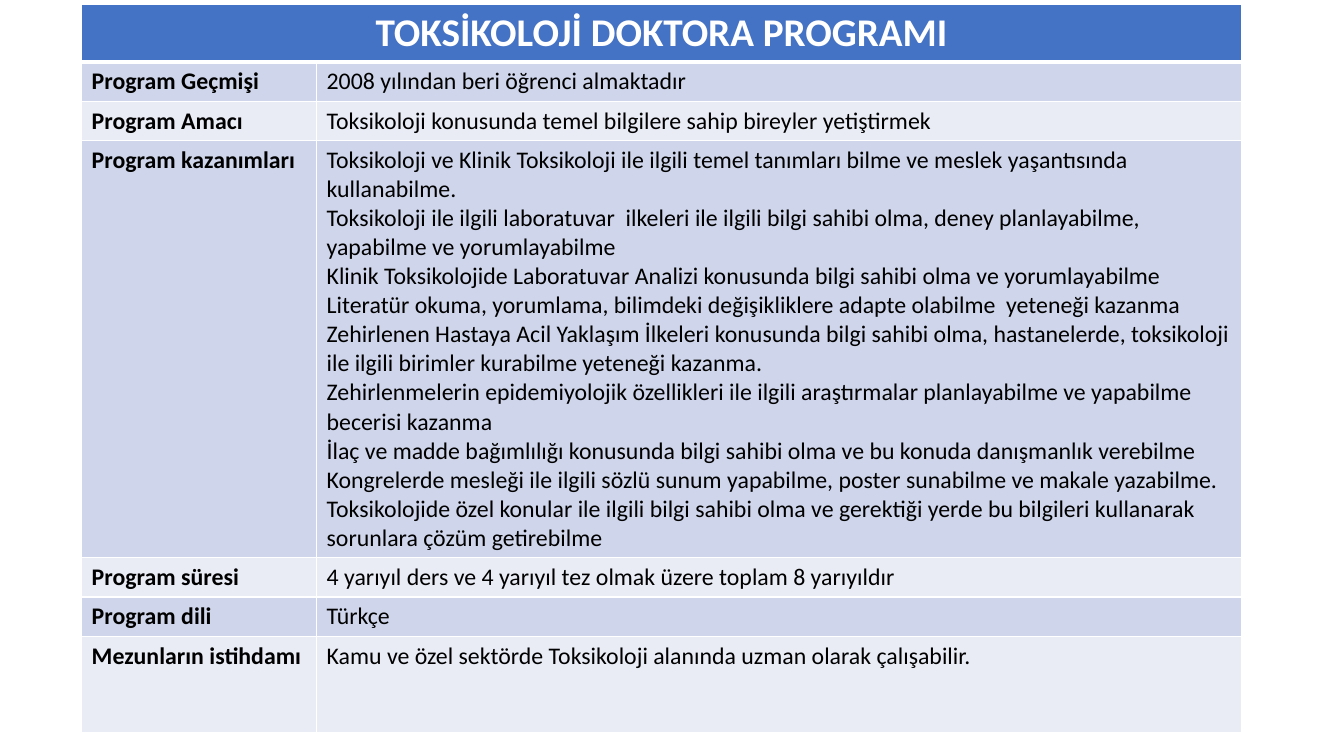
from lxml.etree import SubElement
from pptx import Presentation
from pptx.dml.color import RGBColor
from pptx.enum.text import PP_ALIGN
from pptx.oxml.ns import qn
from pptx.util import Inches, Pt

HEADING = "TOKSİKOLOJİ DOKTORA PROGRAMI"
OUTCOMES = [
    "Toksikoloji ve Klinik Toksikoloji ile ilgili temel tanımları bilme ve meslek yaşantısında kullanabilme.",
    "Toksikoloji ile ilgili laboratuvar  ilkeleri ile ilgili bilgi sahibi olma, deney planlayabilme, yapabilme ve yorumlayabilme",
    "Klinik Toksikolojide Laboratuvar Analizi konusunda bilgi sahibi olma ve yorumlayabilme",
    "Literatür okuma, yorumlama, bilimdeki değişikliklere adapte olabilme  yeteneği kazanma",
    "Zehirlenen Hastaya Acil Yaklaşım İlkeleri konusunda bilgi sahibi olma, hastanelerde, toksikoloji ile ilgili birimler kurabilme yeteneği kazanma.",
    "Zehirlenmelerin epidemiyolojik özellikleri ile ilgili araştırmalar planlayabilme ve yapabilme becerisi kazanma",
    "İlaç ve madde bağımlılığı konusunda bilgi sahibi olma ve bu konuda danışmanlık verebilme",
    "Kongrelerde mesleği ile ilgili sözlü sunum yapabilme, poster sunabilme ve makale yazabilme.",
    "Toksikolojide özel konular ile ilgili bilgi sahibi olma ve gerektiği yerde bu bilgileri kullanarak sorunlara çözüm getirebilme",
]
FACTS = [
    ("Program Geçmişi", ["2008 yılından beri öğrenci almaktadır"], 0.38),
    ("Program Amacı", ["Toksikoloji konusunda temel bilgilere sahip bireyler yetiştirmek"], 0.38),
    ("Program kazanımları", OUTCOMES, 3.96),
    ("Program süresi", ["4 yarıyıl ders ve 4 yarıyıl tez olmak üzere toplam 8 yarıyıldır"], 0.38),
    ("Program dili", ["Türkçe"], 0.38),
    ("Mezunların istihdamı", ["Kamu ve özel sektörde Toksikoloji alanında uzman olarak çalışabilir."], 0.96),
]
BANDS = ["CFD5EA", "E9EBF5"]
COLUMN_WIDTHS = [2.33, 9.17]
HEADING_HEIGHT = 0.54


def color(value):
    return RGBColor.from_string(value)


def write(cell, lines, fill, size=17, bold=False, ink="000000", align=PP_ALIGN.LEFT, rule=1):
    properties = cell._tc.get_or_add_tcPr()
    for side, points in (("L", 1), ("R", 1), ("T", 1), ("B", rule)):
        border = SubElement(properties, qn(f"a:ln{side}"), w=str(Pt(points)))
        paint = SubElement(border, qn("a:solidFill"))
        SubElement(paint, qn("a:srgbClr"), val="FFFFFF")
    cell.fill.solid()
    cell.fill.fore_color.rgb = color(fill)
    cell.text = "\n".join(lines)
    for paragraph in cell.text_frame.paragraphs:
        paragraph.alignment = align
        for run in paragraph.runs:
            run.font.name = "Calibri"
            run.font.size = Pt(size)
            run.font.bold = bold
            run.font.color.rgb = color(ink)


deck = Presentation()
deck.slide_width, deck.slide_height = Inches(13.33), Inches(7.5)
slide = deck.slides.add_slide(deck.slide_layouts[6])

heights = [HEADING_HEIGHT] + [height for _, _, height in FACTS]
program = slide.shapes.add_table(
    len(heights), len(COLUMN_WIDTHS), Inches(0.81), Inches(0.04),
    Inches(sum(COLUMN_WIDTHS)), Inches(sum(heights)),
).table
for column, width in zip(program.columns, COLUMN_WIDTHS):
    column.width = Inches(width)
for row, height in zip(program.rows, heights):
    row.height = Inches(height)

program.cell(0, 0).merge(program.cell(0, 1))
write(program.cell(0, 0), [HEADING], "4472C4", size=28, bold=True,
      ink="FFFFFF", align=PP_ALIGN.CENTER, rule=3)

for index, (label, details, _) in enumerate(FACTS):
    band = BANDS[index % 2]
    write(program.cell(index + 1, 0), [label], band, bold=True)
    write(program.cell(index + 1, 1), details, band)

deck.save("out.pptx")
